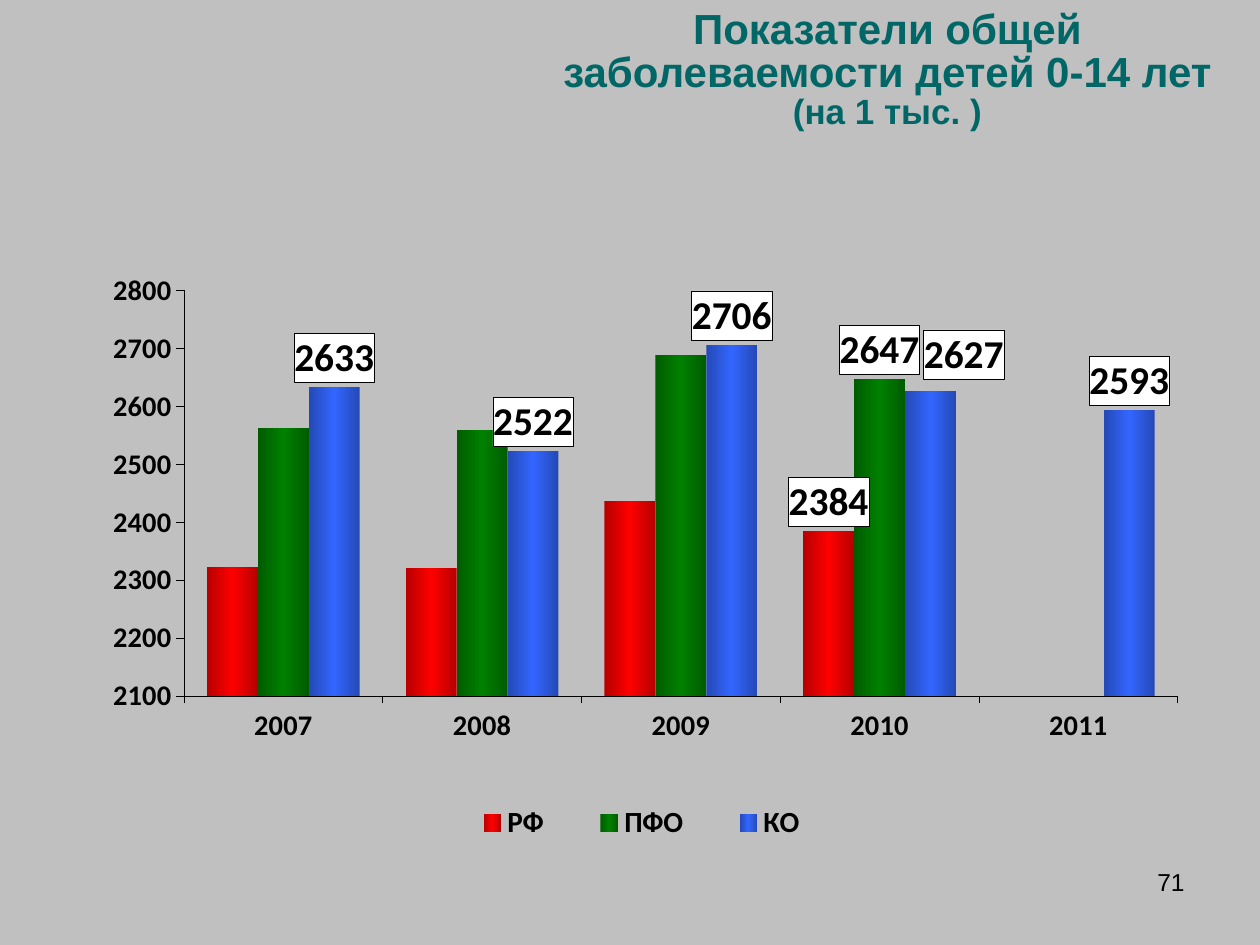
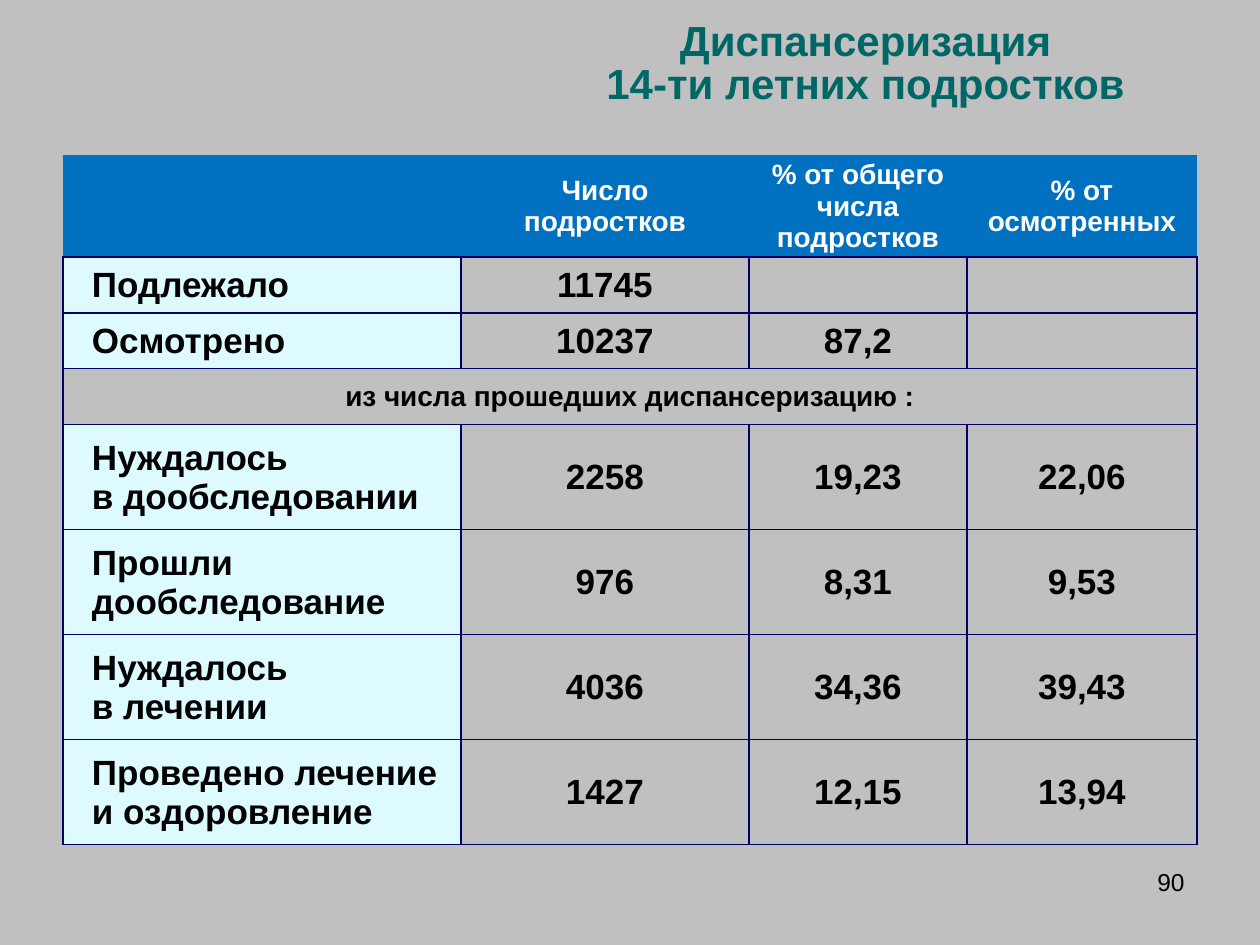
from dataclasses import dataclass

from lxml import etree
from pptx import Presentation
from pptx.chart.data import CategoryChartData
from pptx.dml.color import RGBColor
from pptx.enum.chart import XL_CHART_TYPE, XL_LABEL_POSITION, XL_LEGEND_POSITION, XL_TICK_MARK
from pptx.enum.text import MSO_ANCHOR, PP_ALIGN
from pptx.oxml import parse_xml
from pptx.oxml.ns import nsdecls, qn
from pptx.util import Emu, Pt

EMU_PER_PX = 914400 / 126
COLORS = {
    "background": "C0C0C0",
    "title": "006666",
    "text": "000000",
    "white": "FFFFFF",
    "header": "0070C0",
    "label": "DDFBFF",
    "border": "000066",
}
PLAIN_TABLE_STYLE = "{2D5ABB26-0587-4C30-8999-92F81FD0307C}"


@dataclass(frozen=True)
class Box:
    left: int
    top: int
    width: int
    height: int

    def emu(self) -> list[Emu]:
        return [px(length) for length in (self.left, self.top, self.width, self.height)]


@dataclass(frozen=True)
class Line:
    text: str
    size: int


@dataclass(frozen=True)
class BarSeries:
    name: str
    values: tuple
    edge: str
    middle: str
    all_labels: bool = False


@dataclass(frozen=True)
class CellStyle:
    size: int
    color: str = "text"
    fill: str | None = None
    align: PP_ALIGN = PP_ALIGN.CENTER
    indent: int = 4
    bordered: bool = True


PAGE_NUMBER_BOX = Box(903, 861, 294, 66)
YEARS = ("2007", "2008", "2009", "2010", "2011")
LABELLED_YEAR = YEARS.index("2010")
REGIONS = (
    BarSeries("РФ", (2323, 2321, 2436, 2384, None), "B60000", "FF0000"),
    BarSeries("ПФО", (2562, 2559, 2689, 2647, None), "005C00", "008000"),
    BarSeries("КО", (2633, 2522, 2706, 2627, 2593), "2449B6", "3366FF", True),
)

HEADER = CellStyle(16, "white", "header", bordered=False)
ROW_LABEL = CellStyle(20, fill="label", align=PP_ALIGN.LEFT, indent=29)
NUMBER = CellStyle(20)
SECTION = CellStyle(16)
COLUMN_WIDTHS = (398, 288, 218, 230)
ROW_HEIGHTS = (95,) + (56,) * 3 + (105,) * 4
SECTION_ROW = 3
TABLE_ROWS = (
    ("", "Число\nподростков", "% от общего числа подростков", "% от осмотренных"),
    ("Подлежало", "11745", "", ""),
    ("Осмотрено", "10237", "87,2", ""),
    ("из числа прошедших диспансеризацию :", "", "", ""),
    ("Нуждалось\nв дообследовании", "2258", "19,23", "22,06"),
    ("Прошли дообследование", "976", "8,31", "9,53"),
    ("Нуждалось\nв лечении", "4036", "34,36", "39,43"),
    ("Проведено лечение\nи оздоровление", "1427", "12,15", "13,94"),
)


def px(length: int) -> Emu:
    return Emu(round(length * EMU_PER_PX))


def rgb(name: str) -> RGBColor:
    return RGBColor.from_string(COLORS[name])


def format_font(font, size: float, color: str = "text", bold: bool = True, name: str = "Arial") -> None:
    for attribute, value in {"size": Pt(size), "bold": bold, "name": name}.items():
        setattr(font, attribute, value)
    font.color.rgb = rgb(color)


def new_slide(presentation, title_box: Box, title: list[Line], page_number: str):
    """Add a blank slide with the shared background, title and page number."""
    slide = presentation.slides.add_slide(presentation.slide_layouts[6])
    slide.background.fill.solid()
    slide.background.fill.fore_color.rgb = rgb("background")

    frame = slide.shapes.add_textbox(*title_box.emu()).text_frame
    frame.word_wrap = True
    frame.vertical_anchor = MSO_ANCHOR.MIDDLE
    paragraph = frame.paragraphs[0]
    paragraph.alignment = PP_ALIGN.CENTER
    paragraph.line_spacing = 0.85
    for index, line in enumerate(title):
        if index:
            paragraph.add_line_break()
        run = paragraph.add_run()
        run.text = line.text
        format_font(run.font, line.size, "title")

    frame = slide.shapes.add_textbox(*PAGE_NUMBER_BOX.emu()).text_frame
    frame.word_wrap = True
    paragraph = frame.paragraphs[0]
    paragraph.alignment = PP_ALIGN.RIGHT
    run = paragraph.add_run()
    run.text = page_number
    format_font(run.font, 14, bold=False)
    return slide


def set_layout(parent, index: int, **values) -> None:
    """Give a chart part a manual layout, as fractions of the chart."""
    for old in parent.findall(qn("c:layout")):
        parent.remove(old)
    settings = "".join(f'<c:{key} val="{value}"/>' for key, value in values.items())
    parent.insert(index, parse_xml(
        f'<c:layout {nsdecls("c")}><c:manualLayout>{settings}</c:manualLayout></c:layout>'))


def fill_bars(series, region: BarSeries) -> None:
    stops = "".join(
        f'<a:gs pos="{position}"><a:srgbClr val="{color}"/></a:gs>'
        for position, color in ((0, region.edge), (50000, region.middle), (100000, region.edge)))
    series._element.get_or_add_spPr().insert(0, parse_xml(
        f'<a:gradFill {nsdecls("a")}><a:gsLst>{stops}</a:gsLst><a:lin ang="0" scaled="1"/></a:gradFill>'))
    series.format.line.fill.background()
    series.invert_if_negative = False


def label_bars(series, region: BarSeries) -> None:
    labels = series.data_labels
    labels.show_value = region.all_labels
    targets = [series.points[LABELLED_YEAR].data_label]
    if region.all_labels:
        targets.append(labels)
    for target in targets:
        format_font(target.font, 22.5, name="Calibri")
        target.position = XL_LABEL_POSITION.OUTSIDE_END
    for text_properties in series._element.xpath(".//c:dLbls//c:txPr"):
        text_properties.addprevious(parse_xml(
            f'<c:spPr {nsdecls("c", "a")}><a:solidFill><a:srgbClr val="{COLORS["white"]}"/></a:solidFill>'
            f'<a:ln w="3175"><a:solidFill><a:srgbClr val="{COLORS["text"]}"/></a:solidFill></a:ln></c:spPr>'))
    if region.all_labels:
        set_layout(series._element.xpath(".//c:dLbl")[0], 1, x=0.03, y=-0.01)


def add_morbidity_chart(slide, box: Box) -> None:
    data = CategoryChartData()
    data.categories = YEARS
    for region in REGIONS:
        data.add_series(region.name, region.values)
    chart = slide.shapes.add_chart(XL_CHART_TYPE.COLUMN_CLUSTERED, *box.emu(), data).chart
    chart.has_title = False
    format_font(chart.font, 22.5, name="Calibri")

    plot = chart.plots[0]
    for attribute, value in {"gap_width": 90, "overlap": 0, "vary_by_categories": False}.items():
        setattr(plot, attribute, value)
    for series, region in zip(plot.series, REGIONS):
        fill_bars(series, region)
        label_bars(series, region)

    for axis in (chart.category_axis, chart.value_axis):
        axis.has_major_gridlines = False
        axis.major_tick_mark = XL_TICK_MARK.OUTSIDE
        axis.minor_tick_mark = XL_TICK_MARK.NONE
        format_font(axis.tick_labels.font, 16.2, name="Calibri")
        axis.format.line.width = Pt(0.25)
        axis.format.line.color.rgb = rgb("text")
    for attribute, value in {"minimum_scale": 2100, "maximum_scale": 2800, "major_unit": 100}.items():
        setattr(chart.value_axis, attribute, value)

    chart.has_legend = True
    legend = chart.legend
    legend.position = XL_LEGEND_POSITION.BOTTOM
    legend.include_in_layout = False
    format_font(legend.font, 16.7, name="Calibri")
    set_layout(legend._element, 1, xMode="edge", yMode="edge", x=0.32, y=0.9, w=0.37, h=0.07)
    set_layout(chart._chartSpace.chart.plotArea, 0, layoutTarget="inner", xMode="edge", yMode="edge",
               x=0.092, y=0.146, w=0.897, h=0.601)


def draw_borders(cell) -> None:
    properties = cell._tc.get_or_add_tcPr()
    for index, side in enumerate(("lnL", "lnR", "lnT", "lnB")):
        line = etree.Element(qn(f"a:{side}"), w=str(Pt(1)))
        fill = etree.SubElement(line, qn("a:solidFill"))
        etree.SubElement(fill, qn("a:srgbClr"), val=COLORS["border"])
        properties.insert(index, line)


def style_for(row: int, column: int) -> CellStyle:
    if row == 0:
        return HEADER
    if row == SECTION_ROW:
        return SECTION
    return NUMBER if column else ROW_LABEL


def fill_cell(cell, text: str, style: CellStyle) -> None:
    margins = {"margin_left": style.indent, "margin_right": 4, "margin_top": 1, "margin_bottom": 0}
    for attribute, length in margins.items():
        setattr(cell, attribute, px(length))
    cell.vertical_anchor = MSO_ANCHOR.MIDDLE
    if style.fill:
        cell.fill.solid()
        cell.fill.fore_color.rgb = rgb(style.fill)
    else:
        cell.fill.background()
    if style.bordered:
        draw_borders(cell)
    if text:
        paragraph = cell.text_frame.paragraphs[0]
        paragraph.text = text
        paragraph.alignment = style.align
        for run in paragraph.runs:
            format_font(run.font, style.size, style.color)


def add_screening_table(slide, left: int, top: int) -> None:
    box = Box(left, top, sum(COLUMN_WIDTHS), sum(ROW_HEIGHTS))
    table = slide.shapes.add_table(len(ROW_HEIGHTS), len(COLUMN_WIDTHS), *box.emu()).table
    table.first_row = table.horz_banding = False
    table._tbl.tblPr.find(qn("a:tableStyleId")).text = PLAIN_TABLE_STYLE
    for column, width in zip(table.columns, COLUMN_WIDTHS):
        column.width = px(width)
    for row, height in zip(table.rows, ROW_HEIGHTS):
        row.height = px(height)
    table.cell(SECTION_ROW, 0).merge(table.cell(SECTION_ROW, len(COLUMN_WIDTHS) - 1))
    for row, texts in enumerate(TABLE_ROWS):
        for column, text in enumerate(texts):
            fill_cell(table.cell(row, column), text, style_for(row, column))


def main() -> None:
    presentation = Presentation()
    presentation.slide_width, presentation.slide_height = px(1260), px(945)

    morbidity = new_slide(
        presentation, Box(515, 16, 745, 110),
        [Line("Показатели общей заболеваемости детей 0-14 лет", 24), Line("(на 1 тыс. )", 20)], "71")
    add_morbidity_chart(morbidity, Box(82, 192, 1108, 675))

    screening = new_slide(
        presentation, Box(471, 5, 789, 121),
        [Line("Диспансеризация", 24), Line("14-ти летних подростков", 24)], "90")
    add_screening_table(screening, 63, 155)

    presentation.save("out.pptx")


if __name__ == "__main__":
    main()
